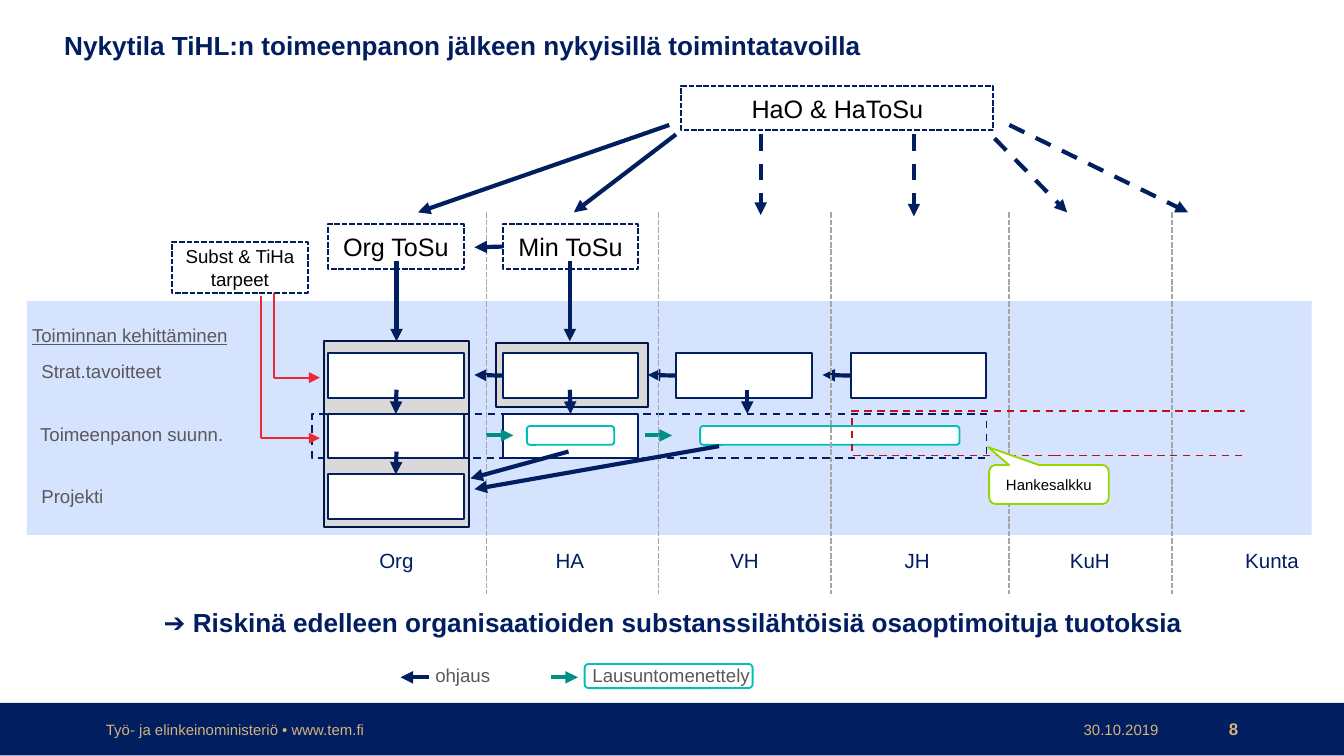
"""Build the slide on steering after the TiHL act under current practices."""
from lxml.etree import SubElement
from pptx import Presentation
from pptx.dml.color import RGBColor
from pptx.enum.dml import MSO_LINE as Dash
from pptx.enum.shapes import MSO_CONNECTOR, MSO_SHAPE as Kind
from pptx.enum.text import MSO_ANCHOR as Anchor, MSO_AUTO_SIZE as AutoSize, PP_ALIGN as Align
from pptx.oxml.ns import qn
from pptx.util import Inches, Pt

NAVY = RGBColor(0x00, 0x1E, 0x60)
DEEP_NAVY = RGBColor(0x00, 0x16, 0x47)
PALE_BLUE = RGBColor(0xD6, 0xE3, 0xFF)
LIGHT_GREY = RGBColor(0xD9, 0xD9, 0xD9)
MID_GREY = RGBColor(0xA6, 0xA6, 0xA6)
DARK_GREY = RGBColor(0x59, 0x59, 0x59)
TURQUOISE = RGBColor(0x00, 0xBF, 0xB3)
TEAL = RGBColor(0x00, 0x8F, 0x86)
GOLD = RGBColor(0xD5, 0xB3, 0x7A)
RED = RGBColor(0xEE, 0x27, 0x37)
DARK_RED = RGBColor(0xC1, 0x0F, 0x1D)
LIME = RGBColor(0x97, 0xD7, 0x00)
WHITE = RGBColor(0xFF, 0xFF, 0xFF)
BLACK = RGBColor(0x00, 0x00, 0x00)

TITLE = "Nykytila TiHL:n toimeenpanon jälkeen nykyisillä toimintatavoilla"
CONCLUSION = "➔ Riskinä edelleen organisaatioiden substanssilähtöisiä osaoptimoituja tuotoksia"
FOOTER = [
    ("Työ- ja elinkeinoministeriö • www.tem.fi", 0.69, 3.37, 8, False, Align.LEFT),
    ("30.10.2019", 7.95, 0.77, 8, False, Align.RIGHT),
    ("8", 8.72, 0.59, 9, True, Align.RIGHT),
]
LEVELS = [("Org", 2.71, 0.48), ("HA", 4.03, 0.42), ("VH", 5.33, 0.42),
          ("JH", 6.63, 0.39), ("KuH", 7.86, 0.5), ("Kunta", 9.16, 0.61)]
ROW_LABELS = [("Strat.tavoitteet", 0.21, 2.63, 1.1), ("Toimeenpanon suunn.", 0.2, 3.1, 1.59),
              ("Projekti", 0.21, 3.56, 0.67)]
LEGEND = [("ohjaus", 3.14, 0.61), ("Lausuntomenettely", 4.31, 1.38)]
DIVIDERS = [3.62, 4.9, 6.18, 7.51, 8.72]
COLUMNS = [2.44, 3.74, 5.03, 6.33]
GOALS, PLANS, PROJECTS = [2.63 + 0.45 * row for row in range(3)]
BOX_W, BOX_H = 1.01, 0.33
STATEMENT_ARROWS = [(3.62, 3.24), (4.8, 3.24), (4.1, 5.04)]
SOLID_STEERING = [(5.03, 1, 4.27, 1.58), (4.98, 0.93, 3.11, 1.58), (4.24, 1.94, 4.24, 2.54),
                  (5.56, 2.9, 5.56, 3.08), (4.23, 3.36, 3.5, 3.56), (5.35, 3.32, 3.53, 3.64),
                  (3.19, 5.04, 2.98, 5.04)]
DASHED_STEERING = [(5.66, 1, 5.66, 1.6), (6.8, 1, 6.8, 1.61),
                   (7.4, 1.03, 7.94, 1.58), (7.51, 0.93, 8.84, 1.58)]
NEEDS = [(1.94, 2.2, 3.26), (2.04, 2.18, 2.81)]

prs = Presentation()
prs.slide_width = Inches(10)
prs.slide_height = prs.slide_width * 9 // 16
slide = prs.slides.add_slide(prs.slide_layouts[6])


def write(frame, text, size=10, color=DARK_GREY, bold=False, underline=False, align=Align.LEFT):
    paragraph = frame.paragraphs[0]
    paragraph.alignment = align
    run = paragraph.add_run()
    run.text = text
    font = run.font
    font.name, font.size, font.bold, font.underline = "Arial", Pt(size), bold, underline
    font.color.rgb = color


def label(text, left, top, width, height=0.27, fit=True, **style):
    box = slide.shapes.add_textbox(Inches(left), Inches(top), Inches(width), Inches(height))
    frame = box.text_frame
    frame.word_wrap = not fit
    if fit:
        frame.auto_size = AutoSize.SHAPE_TO_FIT_TEXT
    else:
        frame.vertical_anchor = Anchor.MIDDLE
        frame.margin_top = frame.margin_bottom = 0
    write(frame, text, **style)


def block(left, top, width=BOX_W, height=BOX_H, fill=WHITE, line=NAVY, dash=None,
          kind=Kind.RECTANGLE, text=None, size=13.5):
    shape = slide.shapes.add_shape(kind, Inches(left), Inches(top), Inches(width), Inches(height))
    shape.shadow.inherit = False
    if fill is None:
        shape.fill.background()
    else:
        shape.fill.solid()
        shape.fill.fore_color.rgb = fill
    if line is None:
        shape.line.fill.background()
    else:
        shape.line.color.rgb = line
        shape.line.width = Pt(1)
        shape.line.dash_style = dash
    if text:
        frame = shape.text_frame
        frame.word_wrap = True
        frame.vertical_anchor = Anchor.MIDDLE
        frame.margin_left = frame.margin_right = Inches(0.05)
        frame.margin_top = frame.margin_bottom = 0
        write(frame, text, size=size, color=BLACK, align=Align.CENTER)
    return shape


def link(x1, y1, x2, y2, color=NAVY, width=2.25, dash=None, arrow=True, start=None, end=None):
    line = slide.shapes.add_connector(MSO_CONNECTOR.STRAIGHT, Inches(x1), Inches(y1),
                                      Inches(x2), Inches(y2))
    line.line.color.rgb = color
    line.line.width = Pt(width)
    line.line.dash_style = dash
    if arrow:
        SubElement(line.line._get_or_add_ln(), qn("a:tailEnd"), type="triangle")
    SubElement(line._element.spPr, qn("a:effectLst"))
    if start:
        line.begin_connect(*start)
    if end:
        line.end_connect(*end)


block(0, 5.23, 10, 0.39, fill=NAVY, line=None)
block(0.2, 2.24, 9.56, 1.74, fill=PALE_BLUE, line=None)
block(3.69, 2.55, 1.13, 0.48, fill=LIGHT_GREY, line=DEEP_NAVY)
org_frame = block(2.41, 2.54, 1.08, 1.38, fill=LIGHT_GREY, line=DEEP_NAVY)
block(4.35, 4.94, 1.25, 0.18, line=TURQUOISE, kind=Kind.ROUNDED_RECTANGLE)
ha_plan = block(COLUMNS[1], PLANS)
block(2.32, PLANS, 5.02, fill=None, dash=Dash.DASH)

for text, left, width, size, bold, align in FOOTER:
    label(text, left, 5.34, width, 0.17, fit=False, size=size, bold=bold, color=GOLD, align=align)

org_plan = block(COLUMNS[0], PLANS)
org_project = block(COLUMNS[0], PROJECTS)
goals = [block(left, GOALS) for left in COLUMNS]
for left, width in [(3.92, 0.65), (5.21, 1.93)]:
    block(left, 3.17, width, 0.14, line=TURQUOISE, kind=Kind.ROUNDED_RECTANGLE)
block(6.34, 3.06, 3.02, fill=None, line=DARK_RED, dash=Dash.DASH)

for goal, left in zip(goals[1:], COLUMNS[1:]):
    link(left, 2.79, left - 0.21, 2.79, start=(goal, 1))
for x, y, target in [(2.95, 2.9, org_plan), (2.95, 3.36, org_project), (4.24, 2.9, ha_plan)]:
    link(x, y, x, y + 0.18, end=(target, 0))
for x, y in STATEMENT_ARROWS:
    link(x, y, x + 0.2, y, color=TEAL)
for x in DIVIDERS:
    link(x, 1.58, x, 4.42, color=MID_GREY, width=1, dash=Dash.SQUARE_DOT, arrow=False)
block(9.26, 3.01, 0.21, 0.39, fill=PALE_BLUE, line=None)

for text, left, width in LEVELS:
    label(text, left, 4.03, width, 0.29, size=11, color=NAVY, align=Align.CENTER)
for text, left, top, width in ROW_LABELS:
    label(text, left, top, width)
for text, left, width in LEGEND:
    label(text, left, 4.89, width)
label("Toiminnan kehittäminen", 0.14, 2.36, 1.68, underline=True)

block(5.07, 0.64, 2.32, dash=Dash.SQUARE_DOT, text="HaO & HaToSu")
block(COLUMNS[0], 1.67, dash=Dash.SQUARE_DOT, text="Org ToSu")
min_tosu = block(COLUMNS[1], 1.67, dash=Dash.SQUARE_DOT, text="Min ToSu")
block(1.28, 1.8, height=0.38, dash=Dash.SQUARE_DOT, text="Subst & TiHa tarpeet", size=10)
link(3.74, 1.84, 3.53, 1.84, start=(min_tosu, 1))
link(2.95, 1.94, 2.95, 2.54, end=(org_frame, 0))
for x, top, bottom in NEEDS:
    link(x, top, x, bottom, color=RED, width=1, arrow=False)
    link(x, bottom, 2.38, bottom, color=RED, width=1)
for route in SOLID_STEERING:
    link(*route)
for route in DASHED_STEERING:
    link(*route, dash=Dash.DASH)

for text, left, top, width in [(TITLE, 0.37, 0.17, 6.15), (CONCLUSION, 0.97, 4.46, 8.08)]:
    label(text, left, top, width, 0.34, size=14, color=NAVY, bold=True, align=Align.CENTER)
portfolio = block(7.36, 3.46, 0.89, 0.29, line=LIME, kind=Kind.ROUNDED_RECTANGULAR_CALLOUT,
                  text="Hankesalkku", size=8)
portfolio.adjustments[0] = -0.51
portfolio.adjustments[1] = -0.96

prs.save("out.pptx")
